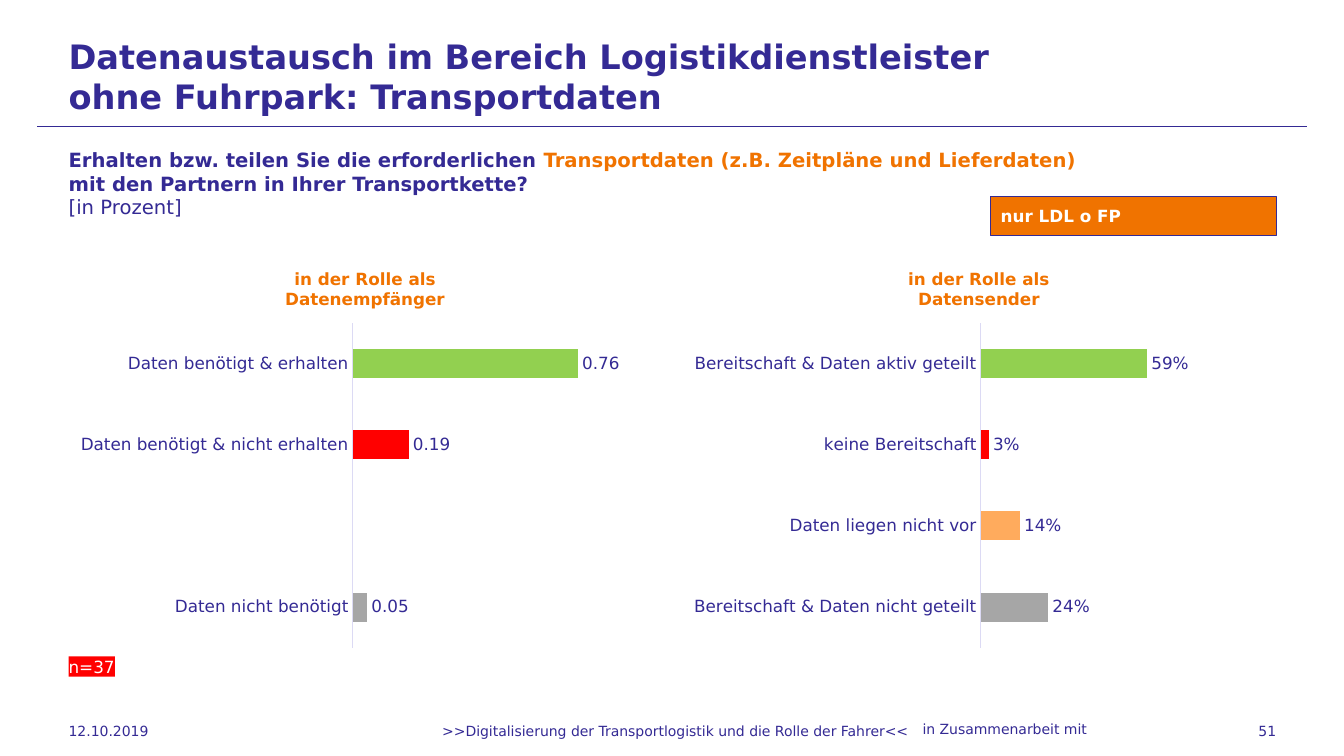
"""Build the survey slide on transport data exchange with two bar charts."""
import pptx
import pptx.chart.data
import pptx.dml.color
import pptx.enum.chart
import pptx.enum.shapes
import pptx.enum.text
import pptx.oxml
import pptx.oxml.ns
import pptx.util
from dataclasses import dataclass

Cm = pptx.util.Cm
ALIGN = pptx.enum.text.PP_ALIGN
ANCHOR = pptx.enum.text.MSO_ANCHOR


@dataclass(frozen=True)
class Theme:
    font: str = "DejaVu Sans"
    navy: str = "342A94"
    orange: str = "F07300"
    white: str = "FFFFFF"
    red: str = "FF0000"
    green: str = "92D050"
    apricot: str = "FFAB5D"
    grey: str = "A6A6A6"
    axis: str = "DCDAF4"
    title_size: int = 24
    question_size: int = 14
    body_size: int = 12
    footer_size: int = 10
    line_width: float = 0.75


THEME = Theme()

TITLE = "Datenaustausch im Bereich Logistikdienstleister ohne Fuhrpark: Transportdaten"
QUESTION = [
    [("Erhalten bzw. teilen Sie die erforderlichen ", THEME.navy, True),
     ("Transportdaten (z.B. Zeitpläne und Lieferdaten) ", THEME.orange, True),
     ("mit den Partnern in Ihrer Transportkette?", THEME.navy, True)],
    [("[in Prozent]", THEME.navy, False)],
]
BADGE = "nur LDL o FP"
SAMPLE = "n=37"
FOOTER_TOP, FOOTER_HEIGHT = 17.91, 1.02
FOOTERS = [
    (">>Digitalisierung der Transportlogistik und die Rolle der Fahrer<<", 6.12, 21.79, ALIGN.CENTER),
    ("12.10.2019", 1.73, 3.99, ALIGN.LEFT),
    ("51", 28.35, 3.81, ALIGN.RIGHT),
]
PARTNER = "in Zusammenarbeit mit"
CHARTS = [
    {"title": "in der Rolle als\nDatenempfänger", "left": 1.73, "plot": (0.479, 0.501), "format": "General",
     "bars": [("Daten nicht benötigt", 0.05, THEME.grey),
              ("", None, None),
              ("Daten benötigt & nicht erhalten", 0.19, THEME.red),
              ("Daten benötigt & erhalten", 0.76, THEME.green)]},
    {"title": "in der Rolle als\nDatensender", "left": 17.2, "plot": (0.503, 0.477), "format": "0%",
     "bars": [("Bereitschaft & Daten nicht geteilt", 0.24, THEME.grey),
              ("Daten liegen nicht vor", 0.14, THEME.apricot),
              ("keine Bereitschaft", 0.03, THEME.red),
              ("Bereitschaft & Daten aktiv geteilt", 0.59, THEME.green)]},
]
CHART_TOP, CHART_WIDTH, CHART_HEIGHT = 6.32, 14.94, 10.21
PLOT_TOP, PLOT_HEIGHT = 0.178, 0.802


def rgb(color):
    return pptx.dml.color.RGBColor.from_string(color)


def style_font(font, size, color, bold=False):
    font.name = THEME.font
    font.size = pptx.util.Pt(size)
    font.bold = bold
    font.color.rgb = rgb(color)


def style_line(line, color):
    line.color.rgb = rgb(color)
    line.width = pptx.util.Pt(THEME.line_width)


def prepare_frame(shape, inset=0.0, anchor=ANCHOR.MIDDLE, wrap=True):
    frame = shape.text_frame
    frame.word_wrap = wrap
    frame.vertical_anchor = anchor
    frame.margin_left = frame.margin_right = Cm(inset)
    frame.margin_top = frame.margin_bottom = Cm(inset / 2)
    return frame


def write(shape, text, size, color, bold=False, align=ALIGN.LEFT, **frame_options):
    frame = prepare_frame(shape, **frame_options)
    frame.text = text
    paragraph = frame.paragraphs[0]
    paragraph.alignment = align
    style_font(paragraph.runs[0].font, size, color, bold)


def add_textbox(slide, left, top, width, height):
    return slide.shapes.add_textbox(Cm(left), Cm(top), Cm(width), Cm(height))


def add_box(slide, left, top, width, height, fill, outline=None):
    shape = slide.shapes.add_shape(
        pptx.enum.shapes.MSO_SHAPE.RECTANGLE, Cm(left), Cm(top), Cm(width), Cm(height))
    shape.shadow.inherit = False
    shape.fill.solid()
    shape.fill.fore_color.rgb = rgb(fill)
    if outline:
        style_line(shape.line, outline)
    else:
        shape.line.fill.background()
    return shape


def add_rule(slide, left, top, right):
    rule = slide.shapes.add_connector(
        pptx.enum.shapes.MSO_CONNECTOR.STRAIGHT, Cm(left), Cm(top), Cm(right), Cm(top))
    style_line(rule.line, THEME.navy)
    rule._element.spPr.append(pptx.oxml.parse_xml(f'<a:effectLst {pptx.oxml.ns.nsdecls("a")}/>'))


def add_question(slide):
    frame = prepare_frame(add_textbox(slide, 1.73, 3.73, 26.39, 1.8), anchor=ANCHOR.TOP)
    for index, parts in enumerate(QUESTION):
        paragraph = frame.add_paragraph() if index else frame.paragraphs[0]
        for text, color, bold in parts:
            run = paragraph.add_run()
            run.text = text
            style_font(run.font, THEME.question_size, color, bold)


def fix_plot_area(chart, left, width):
    plot_area = chart._chartSpace.chart.plotArea
    for layout in plot_area.findall(pptx.oxml.ns.qn("c:layout")):
        plot_area.remove(layout)
    sizes = {"x": left, "y": PLOT_TOP, "w": width, "h": PLOT_HEIGHT}
    modes = '<c:layoutTarget val="inner"/><c:xMode val="edge"/><c:yMode val="edge"/>'
    values = "".join(f'<c:{name} val="{value}"/>' for name, value in sizes.items())
    plot_area.insert(0, pptx.oxml.parse_xml(
        f'<c:layout {pptx.oxml.ns.nsdecls("c")}><c:manualLayout>{modes}{values}</c:manualLayout></c:layout>'))


def add_bar_chart(slide, content):
    labels, values, colors = zip(*content["bars"])
    data = pptx.chart.data.CategoryChartData(number_format=content["format"])
    data.categories = labels
    data.add_series("Series 1", values)
    chart = slide.shapes.add_chart(
        pptx.enum.chart.XL_CHART_TYPE.BAR_CLUSTERED, Cm(content["left"]), Cm(CHART_TOP),
        Cm(CHART_WIDTH), Cm(CHART_HEIGHT), data).chart
    style_font(chart.font, THEME.body_size, THEME.navy)
    chart.has_legend = False
    chart.has_title = True
    chart.chart_title.include_in_layout = False
    title = chart.chart_title.text_frame
    title.text = content["title"]
    for paragraph in title.paragraphs:
        style_font(paragraph.runs[0].font, THEME.body_size, THEME.orange, True)

    category_axis, value_axis = chart.category_axis, chart.value_axis
    category_axis.major_tick_mark = pptx.enum.chart.XL_TICK_MARK.NONE
    style_line(category_axis.format.line, THEME.axis)
    value_axis.minimum_scale, value_axis.maximum_scale = 0, 1
    value_axis.has_major_gridlines = False
    value_axis.visible = False

    plot = chart.plots[0]
    plot.gap_width = 182
    plot.vary_by_categories = False
    plot.has_data_labels = True
    data_labels = plot.data_labels
    data_labels.show_value = True
    data_labels.position = pptx.enum.chart.XL_LABEL_POSITION.OUTSIDE_END
    data_labels.number_format = content["format"]
    data_labels.number_format_is_linked = False
    style_font(data_labels.font, THEME.body_size, THEME.navy)
    for index, color in enumerate(colors):
        if color:
            fill = plot.series[0].points[index].format.fill
            fill.solid()
            fill.fore_color.rgb = rgb(color)
    fix_plot_area(chart, *content["plot"])


def main():
    presentation = pptx.Presentation()
    presentation.slide_width, presentation.slide_height = Cm(33.87), Cm(19.05)
    slide = presentation.slides.add_slide(presentation.slide_layouts[6])
    add_rule(slide, 0.94, 3.18, 32.94)
    write(add_textbox(slide, 1.73, 1.52, 24, 0.79), TITLE, THEME.title_size, THEME.navy, True)
    for content in CHARTS:
        add_bar_chart(slide, content)
    add_question(slide)
    write(add_box(slide, 24.97, 4.95, 7.19, 0.99, THEME.orange, THEME.navy),
          BADGE, THEME.body_size, THEME.white, True, inset=0.25)
    write(add_box(slide, 1.73, 16.54, 1.17, 0.51, THEME.red),
          SAMPLE, THEME.body_size, THEME.white, anchor=ANCHOR.TOP, wrap=False)
    for text, left, width, align in FOOTERS:
        write(add_textbox(slide, left, FOOTER_TOP, width, FOOTER_HEIGHT),
              text, THEME.footer_size, THEME.navy, align=align)
    write(add_textbox(slide, 21.34, 18.03, 6.3, 0.69), PARTNER, THEME.footer_size, THEME.navy,
          align=ALIGN.RIGHT, inset=0.25, anchor=ANCHOR.TOP)
    presentation.save("out.pptx")


if __name__ == "__main__":
    main()
